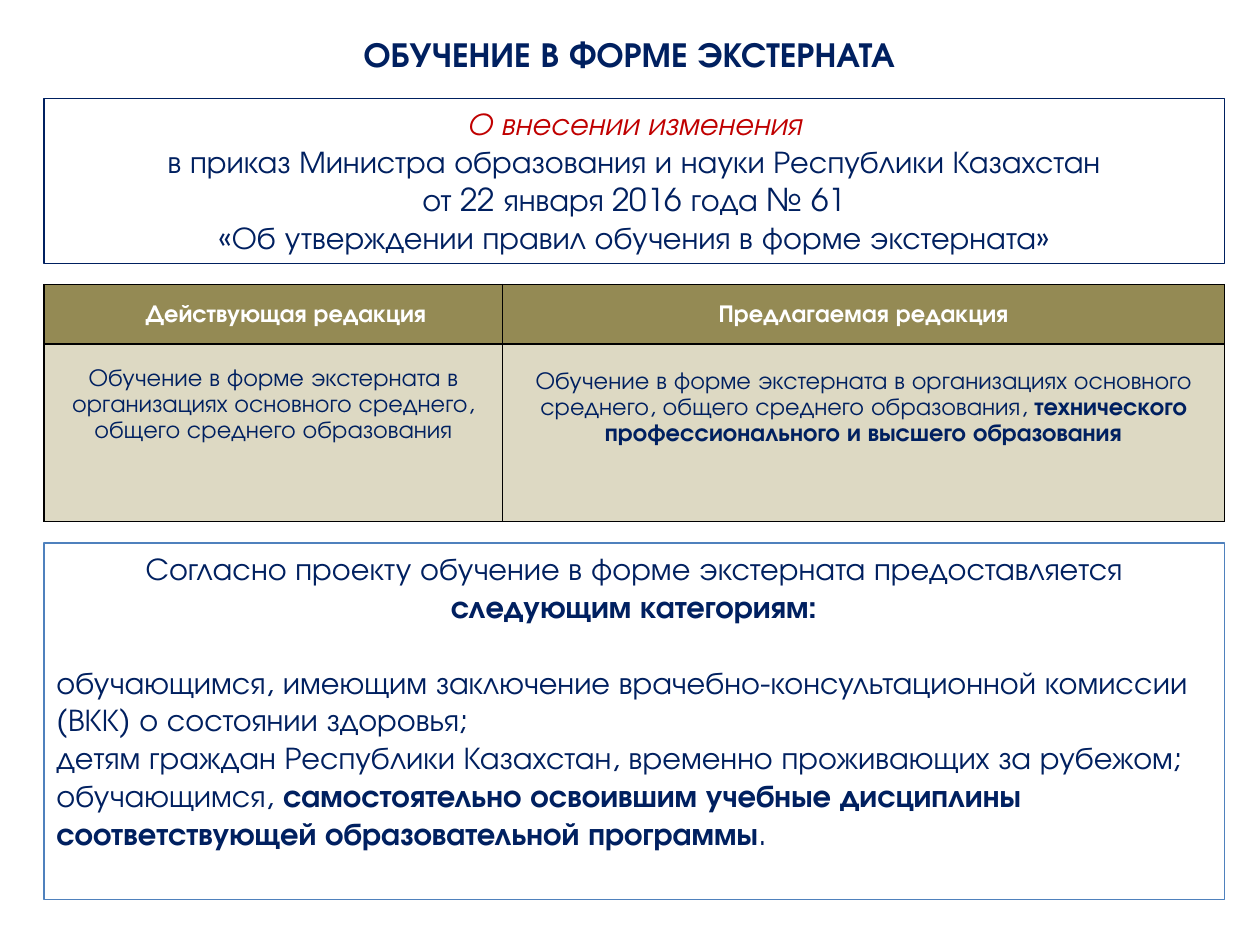
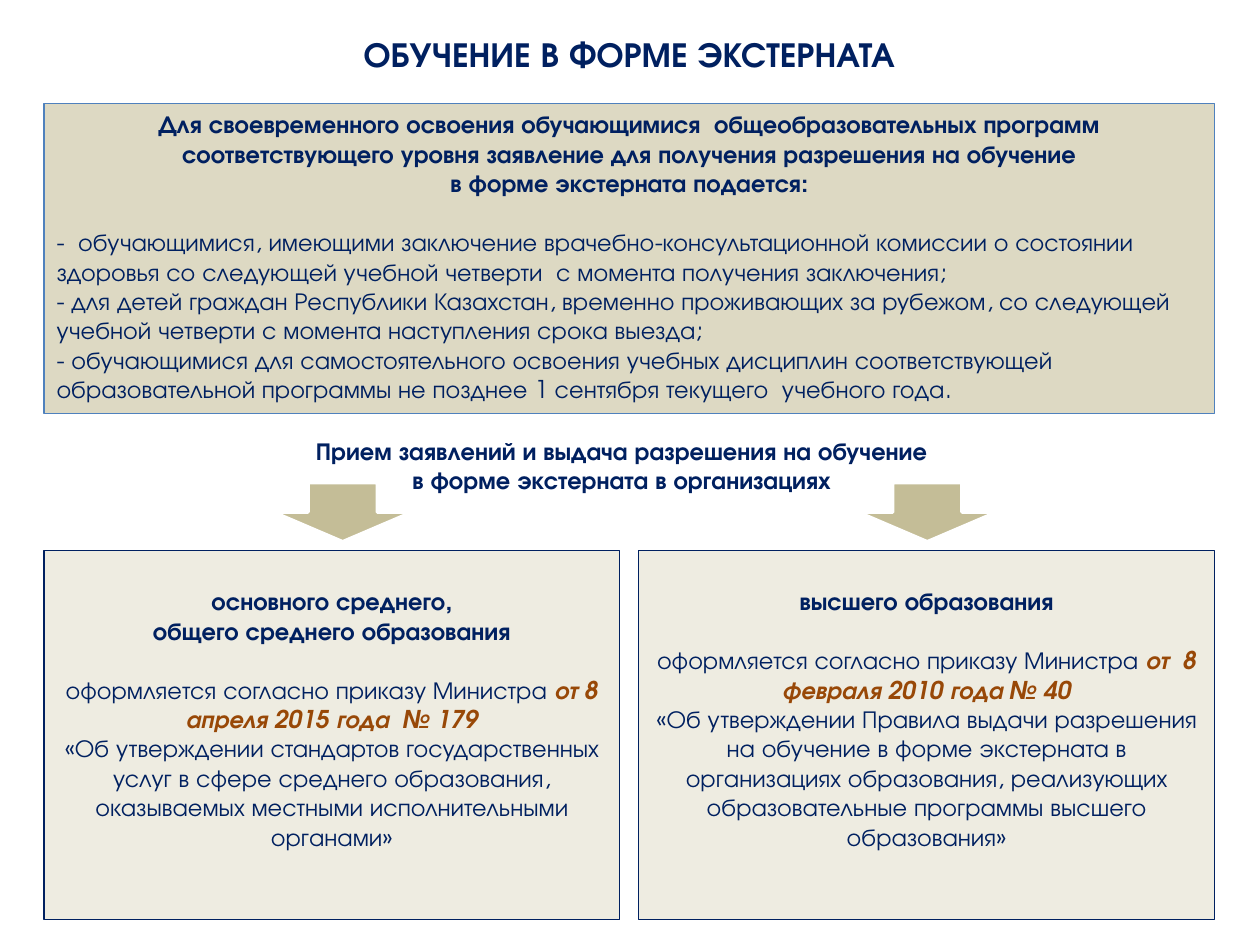
from pptx import Presentation
from pptx import util as u
from pptx.dml.color import RGBColor
from pptx.enum import shapes, text
from pptx.oxml import parse_xml
from pptx.oxml.ns import nsdecls

COLOURS = {
    "navy": "002060", "white": "FFFFFF", "black": "000000", "blue": "4F81BD",
    "red": "C00000", "brown": "984807", "olive": "948A54", "sand": "DDD9C3",
    "khaki": "C4BD97", "ivory": "EEECE1",
}
FONT = "TeX Gyre Adventor"
STYLES = {
    "plain": {},
    "bold": {"bold": True},
    "amendment": {"italic": True, "colour": "red"},
    "date": {"bold": True, "italic": True, "colour": "brown"},
    "header": {"bold": True, "colour": "white"},
}
CENTER, LEFT = text.PP_ALIGN.CENTER, text.PP_ALIGN.LEFT
MARGIN, WIDTH, WIDE = 0.35, 9.29, 9.37
COLUMN_GAP = 0.15
LINE = 1.2

TITLE = "ОБУЧЕНИЕ В ФОРМЕ ЭКСТЕРНАТА"

ORDER = [
    (CENTER, [("О внесении изменения", "amendment")]),
    (CENTER, [("в приказ Министра образования и науки Республики Казахстан", "plain")]),
    (CENTER, [("от 22 января 2016 года № 61", "plain")]),
    (CENTER, [("«Об утверждении правил обучения в форме экстерната»", "plain")]),
]
EDITIONS = [
    {"share": 3.64, "indent": 0.2, "drop": 0.17, "header": "Действующая редакция",
     "body": [("Обучение в форме экстерната в организациях основного среднего, "
               "общего среднего образования", "plain")]},
    {"share": 5.73, "indent": 0, "drop": 0.19, "header": "Предлагаемая редакция",
     "body": [("Обучение в форме экстерната в организациях основного среднего, "
               "общего среднего образования, ", "plain"),
              ("технического профессионального и высшего образования", "bold")]},
]
ROW_HEIGHTS = [0.47, 1.41]
CATEGORIES = [
    (CENTER, [("Согласно проекту обучение в форме экстерната предоставляется ", "plain"),
              ("следующим категориям:", "bold")], "gap"),
    (LEFT, [("обучающимся, имеющим заключение врачебно-консультационной комиссии "
             "(ВКК) о состоянии здоровья;", "plain")]),
    (LEFT, [("детям граждан Республики Казахстан, временно проживающих за рубежом;", "plain")]),
    (LEFT, [("обучающимся, ", "plain"),
            ("самостоятельно освоившим учебные дисциплины соответствующей "
             "образовательной программы", "bold"), (".", "plain")]),
]

DEADLINES = [
    (CENTER, [("Для своевременного освоения обучающимися  общеобразовательных программ "
               "соответствующего уровня заявление для получения разрешения на обучение", "bold")]),
    (CENTER, [("в форме экстерната подается:", "bold")], "gap"),
    (LEFT, [("-  обучающимися, имеющими заключение врачебно-консультационной комиссии о состоянии "
             "здоровья со следующей учебной четверти  с момента получения заключения;", "plain")]),
    (LEFT, [("- для детей граждан Республики Казахстан, временно проживающих за рубежом, "
             "со следующей учебной четверти с момента наступления срока выезда;", "plain")]),
    (LEFT, [("- обучающимися для самостоятельного освоения учебных дисциплин соответствующей "
             "образовательной программы не позднее 1 сентября текущего  учебного года.", "plain")]),
]
RECEPTION = [
    (CENTER, [("Прием заявлений и выдача разрешения на обучение", "bold")]),
    (CENTER, [("в форме экстерната в организациях", "bold")]),
]
LEVELS = [
    {"arrow": 2.17, "paragraphs": [
        (CENTER, [("основного среднего,", "bold")]),
        (CENTER, [("общего среднего образования", "bold")], "gap"),
        (CENTER, [("оформляется согласно приказу Министра ", "plain"),
                  ("от 8 апреля 2015 года  № 179", "date")]),
        (CENTER, [("«Об утверждении стандартов государственных услуг в сфере среднего "
                   "образования, оказываемых местными исполнительными органами»", "plain")])]},
    {"arrow": 6.81, "paragraphs": [
        (CENTER, [("высшего образования", "bold")], "gap"),
        (CENTER, [("оформляется согласно приказу Министра ", "plain"),
                  ("от  8 февраля 2010 года № 40", "date")]),
        (CENTER, [("«Об утверждении Правила выдачи разрешения на обучение в форме экстерната "
                   "в организациях образования, реализующих образовательные программы "
                   "высшего образования»", "plain")])]},
]


def colour(name):
    return RGBColor.from_string(COLOURS[name])


def style_font(font, style):
    font.bold = style.get("bold", False)
    font.italic = style.get("italic", False)
    font.color.rgb = colour(style.get("colour", "navy"))


def write(frame, paragraphs, size, spacing=None):
    frame.word_wrap = True
    for index, (align, spans, *gap) in enumerate(paragraphs):
        para = frame.paragraphs[0] if index == 0 else frame.add_paragraph()
        para.alignment = align
        para.line_spacing = spacing
        if gap:
            para.space_after = u.Pt(size * LINE)
        para.font.name = FONT
        para.font.size = u.Pt(size)
        style_font(para.font, STYLES[spans[0][1]])
        for words, style in spans:
            span = para.add_run()
            span.text = words
            if style != spans[0][1]:
                style_font(span.font, STYLES[style])


def add_box(page, place, line, fill=None, weight=0.75, kind=shapes.MSO_SHAPE.RECTANGLE):
    box = page.shapes.add_shape(kind, *map(u.Inches, place))
    box.shadow.inherit = False
    if fill:
        box.fill.solid()
        box.fill.fore_color.rgb = colour(fill)
    else:
        box.fill.background()
    box.line.color.rgb = colour(line)
    box.line.width = u.Pt(weight)
    return box


def add_panel(page, place, paragraphs, size, line, fill=None, drop=0):
    frame = add_box(page, place, line, fill).text_frame
    frame.vertical_anchor = text.MSO_ANCHOR.TOP
    frame.margin_top = u.Inches(0.05 + drop)
    write(frame, paragraphs, size)


def fill_cell(cell, fill, spans, indent=0, drop=0, anchor=text.MSO_ANCHOR.TOP):
    cell.fill.solid()
    cell.fill.fore_color.rgb = colour(fill)
    cell.margin_left, cell.margin_right = u.Inches(0.07 + indent), u.Inches(0.07)
    cell.margin_top, cell.margin_bottom = u.Inches(drop), 0
    cell.vertical_anchor = anchor
    write(cell.text_frame, [(CENTER, spans)], 14, 1.15)
    properties = cell._tc.get_or_add_tcPr()
    for index, side in enumerate(("lnL", "lnR", "lnT", "lnB")):
        properties.insert(index, parse_xml(
            f'<a:{side} {nsdecls("a")} w="12700"><a:solidFill>'
            f'<a:srgbClr val="{COLOURS["black"]}"/></a:solidFill></a:{side}>'))


def add_editions(page):
    table = page.shapes.add_table(
        len(ROW_HEIGHTS), len(EDITIONS), u.Inches(MARGIN), u.Inches(2.26),
        u.Inches(WIDE), u.Inches(sum(ROW_HEIGHTS))).table
    for row, height in zip(table.rows, ROW_HEIGHTS):
        row.height = u.Inches(height)
    for index, edition in enumerate(EDITIONS):
        table.columns[index].width = u.Inches(edition["share"])
        fill_cell(table.cell(0, index), "olive", [(edition["header"], "header")],
                  indent=edition["indent"], anchor=text.MSO_ANCHOR.MIDDLE)
        fill_cell(table.cell(1, index), "sand", edition["body"], drop=edition["drop"])


def add_page(deck):
    page = deck.slides.add_slide(deck.slide_layouts[6])
    add_panel(page, (MARGIN, 0.21, WIDTH, 0.44), [(CENTER, [(TITLE, "bold")])],
              20, "white", "white")
    return page


def build_amendment(deck):
    page = add_page(deck)
    add_editions(page)
    add_panel(page, (MARGIN, 0.78, WIDE, 1.31), ORDER, 18, "navy")
    add_panel(page, (MARGIN, 4.31, WIDE, 2.83), CATEGORIES, 18, "blue")


def build_procedure(deck):
    page = add_page(deck)
    add_panel(page, (MARGIN, 0.82, WIDTH, 2.46), DEADLINES, 14, "blue", "sand")
    add_panel(page, (0.38, 3.41, 9.11, 0.57), RECEPTION, 14, "white")
    width = (WIDTH - COLUMN_GAP) / len(LEVELS)
    for index, level in enumerate(LEVELS):
        left = MARGIN + index * (width + COLUMN_GAP)
        add_panel(page, (left, 4.37, width, 2.93), level["paragraphs"], 14,
                  "navy", "ivory", drop=14 * LINE / 72)
        add_box(page, (level["arrow"], 3.83, 1.1, 0.47), "white", "khaki", 2,
                shapes.MSO_SHAPE.DOWN_ARROW)


def main():
    """Build the two slides on external study."""
    deck = Presentation()
    deck.slide_width, deck.slide_height = u.Inches(10), u.Inches(7.5)
    build_amendment(deck)
    build_procedure(deck)
    deck.save("out.pptx")


if __name__ == "__main__":
    main()
